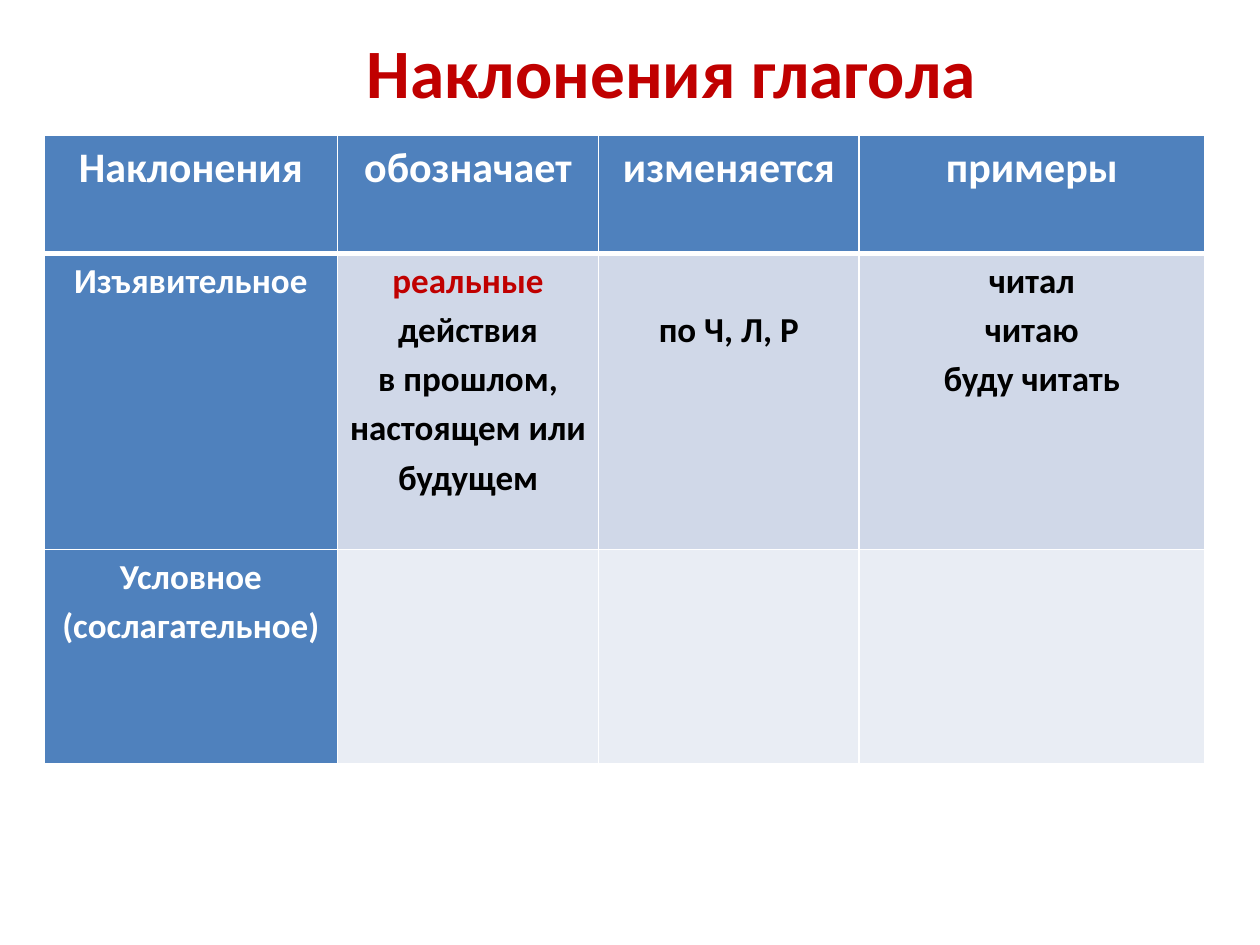
from lxml import etree
from pptx import Presentation
from pptx import util as u
from pptx.dml.color import RGBColor
from pptx.enum import text
from pptx.oxml import ns

RED = RGBColor(0xC0, 0x00, 0x00)
WHITE = RGBColor(0xFF, 0xFF, 0xFF)
BLACK = RGBColor(0x00, 0x00, 0x00)
BLUE = RGBColor(0x4F, 0x81, 0xBD)
BAND_DARK = RGBColor(0xD0, 0xD8, 0xE8)
BAND_LIGHT = RGBColor(0xE9, 0xED, 0xF4)


def write(tf, paragraphs, size=20, color=BLACK, spacing=1.15):
    for i, runs in enumerate(paragraphs):
        p = tf.paragraphs[0] if i == 0 else tf.add_paragraph()
        p.alignment = text.PP_ALIGN.CENTER
        p.line_spacing = spacing
        for words, run_color in runs:
            r = p.add_run()
            r.text = words
            r.font.name = "Calibri"
            r.font.size = u.Pt(size)
            r.font.bold = True
            r.font.color.rgb = run_color or color


def add_border(cell, side, width):
    tcPr = cell._tc.get_or_add_tcPr()
    ln = etree.SubElement(tcPr, ns.qn(f"a:ln{side}"), w=str(u.Pt(width)))
    fill = etree.SubElement(ln, ns.qn("a:solidFill"))
    etree.SubElement(fill, ns.qn("a:srgbClr"), val=str(WHITE))


prs = Presentation()
prs.slide_width, prs.slide_height = u.Inches(10), u.Inches(7.5)
s = prs.slides.add_slide(prs.slide_layouts[5])

title = s.shapes.title
title.left, title.top = u.Inches(0.83), u.Inches(0.29)
title.width, title.height = u.Inches(9), u.Inches(0.55)
tf = title.text_frame
tf.word_wrap = True
tf.auto_size = text.MSO_AUTO_SIZE.NONE
tf.vertical_anchor = text.MSO_ANCHOR.MIDDLE
write(tf, [[("Наклонения глагола", RED)]], size=39.6, spacing=1)

columns = [2.33, 2.07, 2.07, 2.74]
rows = [0.94, 2.35, 1.7]
content = [
    [["Наклонения"], ["обозначает"], ["изменяется"], ["примеры"]],
    [
        ["Изъявительное"],
        ["реальные действия", "в прошлом, настоящем или будущем"],
        ["по Ч, Л, Р"],
        ["читал", "читаю", "буду читать"],
    ],
    [["Условное", "(сослагательное)"], [], [], []],
]
bands = [BLUE, BAND_DARK, BAND_LIGHT]
accent = "реальные "
second_line = u.Inches(0.39)

table = s.shapes.add_table(
    len(rows), len(columns), u.Inches(0.35), u.Inches(1.07),
    u.Inches(sum(columns)), u.Inches(sum(rows))).table
table.first_col = True
for column, width in zip(table.columns, columns):
    column.width = u.Inches(width)
for row, height in zip(table.rows, rows):
    row.height = u.Inches(height)

for i, line in enumerate(content):
    for j, paragraphs in enumerate(line):
        cell = table.cell(i, j)
        cell.margin_left = cell.margin_right = u.Inches(0.04)
        cell.margin_top = second_line if (i, j) == (1, 2) else 0
        cell.margin_bottom = 0
        for side in "LRTB":
            thick = (i, side) in [(0, "B"), (1, "T")]
            add_border(cell, side, 3 if thick else 1)
        heading = i == 0 or j == 0
        cell.fill.solid()
        cell.fill.fore_color.rgb = BLUE if heading else bands[i]
        split = [
            [(accent, RED), (words[len(accent):], None)]
            if words.startswith(accent) else [(words, None)]
            for words in paragraphs
        ]
        write(cell.text_frame, split, size=24 if i == 0 else 20,
              color=WHITE if heading else BLACK)

prs.save("out.pptx")
